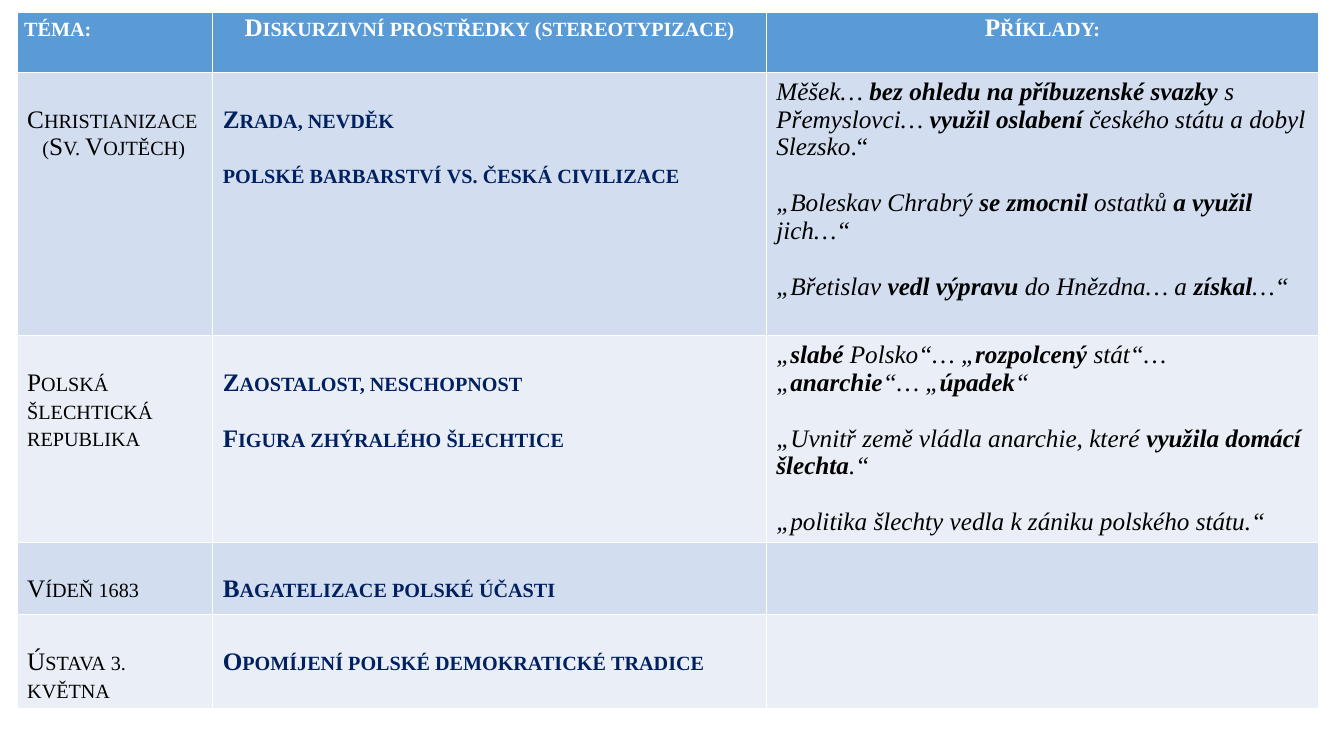
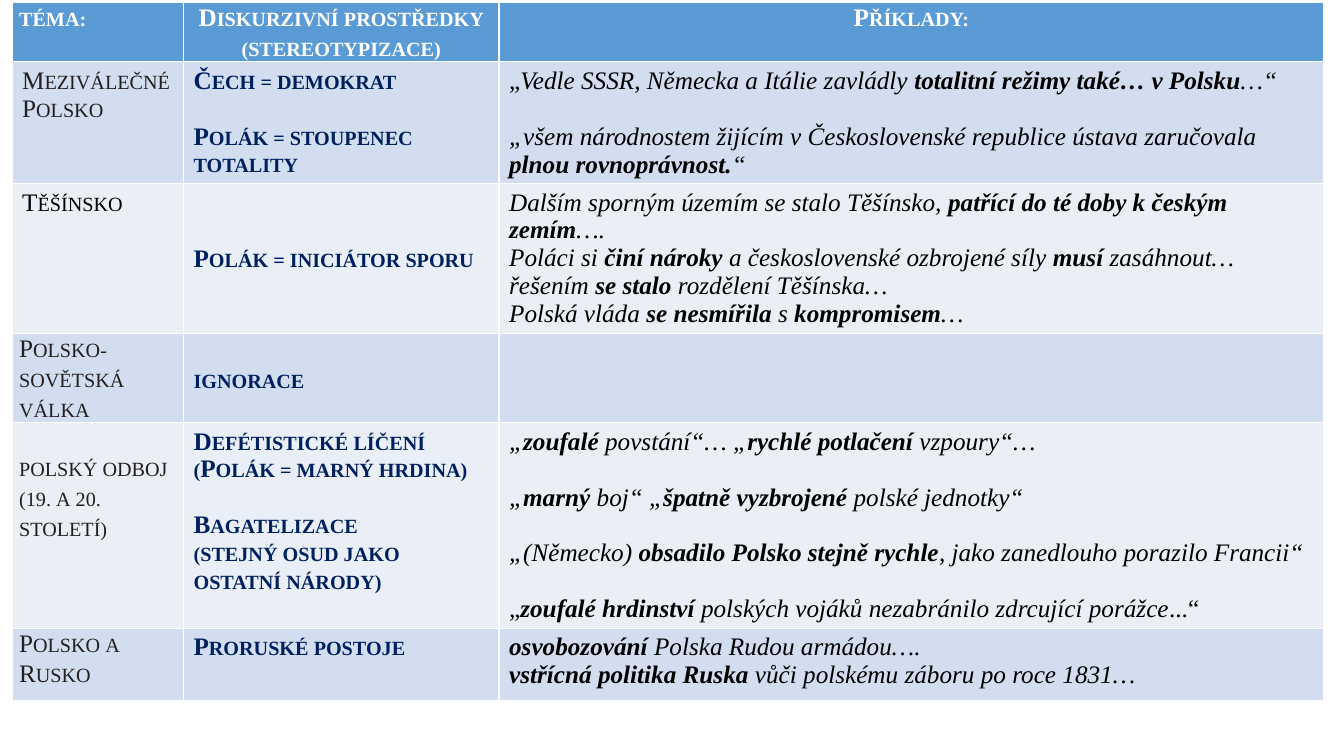
from dataclasses import dataclass
from pptx import Presentation
from pptx.dml.color import RGBColor
from pptx.enum.text import PP_ALIGN
from pptx.util import Inches, Pt


@dataclass(frozen=True)
class Theme:
    font: str = "Times New Roman"
    size: int = 18
    line: int = 20
    lead: float = 1.07
    head: str = "5B9BD5"
    bands: tuple = ("D2DEEF", "EAEFF7")
    white: str = "FFFFFF"
    black: str = "000000"
    dark: str = "231F20"
    navy: str = "002060"
    wide: tuple = (0.1, 0.05)
    tight: tuple = (0.07, 0)


T = Theme()
SIZE = 13.33, 7.5
HEAD = "téma:", "Diskurzivní prostředky (stereotypizace)", "Příklady:"
INDENT = {"(Sv. Vojtěch)": 0.15}

# *bold*, _upright_; an empty string leaves a line of space
PAGES = [
    dict(
        at=(0.17, 0.12), cols=(1.94, 5.49, 5.48), head=0.6,
        rows=[
            (2.61, T.black, T.wide,
             ["", "Christianizace", "(Sv. Vojtěch)"],
             ["", "Zrada, nevděk", "", "polské barbarství vs. česká civilizace"],
             ["Měšek… *bez ohledu na příbuzenské svazky* s Přemyslovci… "
              "*využil oslabení *českého státu a dobyl Slezsko_.“_", "",
              "„Boleskav Chrabrý *se zmocnil *ostatků* a využil *jich…“", "",
              "„Břetislav *vedl výpravu *do Hnězdna… a *získal*…“"]),
            (2.05, T.black, T.wide,
             ["", "Polská šlechtická republika"],
             ["", "Zaostalost, neschopnost", "", "Figura zhýralého šlechtice"],
             ["„*slabé* Polsko“… „*rozpolcený *stát“… „*anarchie*“… „*úpadek*“", "",
              "„Uvnitř země vládla anarchie, které *využila domácí šlechta*.“", "",
              "„politika šlechty vedla k zániku polského státu.“"]),
            (0.72, T.black, T.wide,
             ["", "Vídeň 1683"], ["", "Bagatelizace polské účasti"], []),
            (0.93, T.black, T.wide,
             ["", "Ústava 3. května"],
             ["", "Opomíjení polské demokratické tradice"], []),
        ]),
    dict(
        at=(0.12, 0.02), cols=(1.7, 3.13, 8.18), head=0.58,
        rows=[
            (1.17, T.dark, T.wide,
             ["Meziválečné Polsko"],
             ["Čech = demokrat", "", "Polák = stoupenec totality"],
             ["_„_Vedle SSSR, Německa a Itálie zavládly "
              "*totalitní režimy také… v Polsku*…“", "",
              "„všem národnostem žijícím v Československé republice ústava "
              "zaručovala *plnou rovnoprávnost.*“"]),
            (1.44, T.black, T.wide,
             ["Těšínsko"],
             ["", "", "Polák = iniciátor sporu"],
             ["Dalším sporným územím se stalo Těšínsko, "
              "*patřící do té doby k českým zemím*….",
              "Poláci si *činí nároky* a československé ozbrojené síly "
              "*musí *zasáhnout…",
              "řešením *se stalo* rozdělení Těšínska…",
              "Polská vláda *se nesmířila* s *kompromisem*…"]),
            (0.85, T.dark, T.tight,
             ["Polsko-sovětská válka"], ["", "ignorace"], []),
            (1.98, T.dark, T.tight,
             ["", "polský odboj", "(19. a 20. století)"],
             ["Defétistické líčení", "(Polák = marný hrdina)", "",
              "Bagatelizace", "(stejný osud jako ostatní národy)"],
             ["„*zoufalé *povstání“… „*rychlé potlačení *vzpoury“…", "",
              "„*marný *boj“ „*špatně vyzbrojené *polské jednotky“", "",
              "„(Německo) *obsadilo Polsko stejně rychle*, "
              "jako zanedlouho porazilo Francii“", "",
              "_„_*zoufalé hrdinství *polských vojáků nezabránilo "
              "zdrcující porážce_...“_"]),
            (0.72, T.dark, T.tight,
             ["Polsko a Rusko"], ["Proruské postoje"],
             ["*osvobozování *Polska Rudou armádou….",
              "*vstřícná politika Ruska *vůči polskému záboru po roce 1831…"]),
        ]),
]


def style(para, ink, bold, caps):
    font = para.font
    font.name, font.size = T.font, Pt(T.size)
    font.color.rgb = RGBColor.from_string(ink)
    if caps:
        font.bold = bold
        para._p.get_or_add_pPr().get_or_add_defRPr().set("cap", "small")


def write(para, text):
    for i, part in enumerate(text.split("*")):
        for j, bit in enumerate(part.split("_")):
            if bit:
                run = para.add_run()
                run.text = bit
                run.font.bold = i % 2 == 1
                run.font.italic = j % 2 == 0


def fill(cell, lines, ink, back, pad=T.wide, bold=False, caps=True, mid=False):
    cell.fill.solid()
    cell.fill.fore_color.rgb = RGBColor.from_string(back)
    side, edge = pad
    lead = T.lead if pad == T.tight else 1
    cell.margin_left = cell.margin_right = Inches(side)
    cell.margin_top = cell.margin_bottom = Inches(edge)
    frame, gap, first = cell.text_frame, 0, True
    for text in lines:
        if not text:
            gap += T.line * lead
            continue
        para = frame.paragraphs[0] if first else frame.add_paragraph()
        if first:
            cell.margin_top = Inches(edge) + Pt(gap)
        elif gap:
            para.space_before = Pt(gap)
        gap, first = 0, False
        para.line_spacing = lead
        if mid:
            para.alignment = PP_ALIGN.CENTER
        if text in INDENT:
            para._p.get_or_add_pPr().set("marL", str(Inches(INDENT[text])))
        style(para, ink, bold, caps)
        if caps:
            para.add_run().text = text
        else:
            write(para, text)


def build(deck, page):
    slide = deck.slides.add_slide(deck.slide_layouts[6])
    cols, rows = page["cols"], page["rows"]
    highs = [page["head"]] + [row[0] for row in rows]
    box = [Inches(v) for v in (*page["at"], sum(cols), sum(highs))]
    grid = slide.shapes.add_table(len(highs), len(cols), *box).table
    for col, wide in zip(grid.columns, cols):
        col.width = Inches(wide)
    for row, high in zip(grid.rows, highs):
        row.height = Inches(high)
    for c, text in enumerate(HEAD):
        fill(grid.cell(0, c), [text], T.white, T.head, T.tight, True, mid=c > 0)
    for r, (_, ink, pad, topic, means, quotes) in enumerate(rows, 1):
        back = T.bands[(r - 1) % 2]
        fill(grid.cell(r, 0), topic, ink, back, pad)
        fill(grid.cell(r, 1), means, T.navy, back, bold=True)
        fill(grid.cell(r, 2), quotes, T.black, back, caps=False)


def main():
    deck = Presentation()
    deck.slide_width, deck.slide_height = map(Inches, SIZE)
    for page in PAGES:
        build(deck, page)
    deck.save("out.pptx")


if __name__ == "__main__":
    main()
